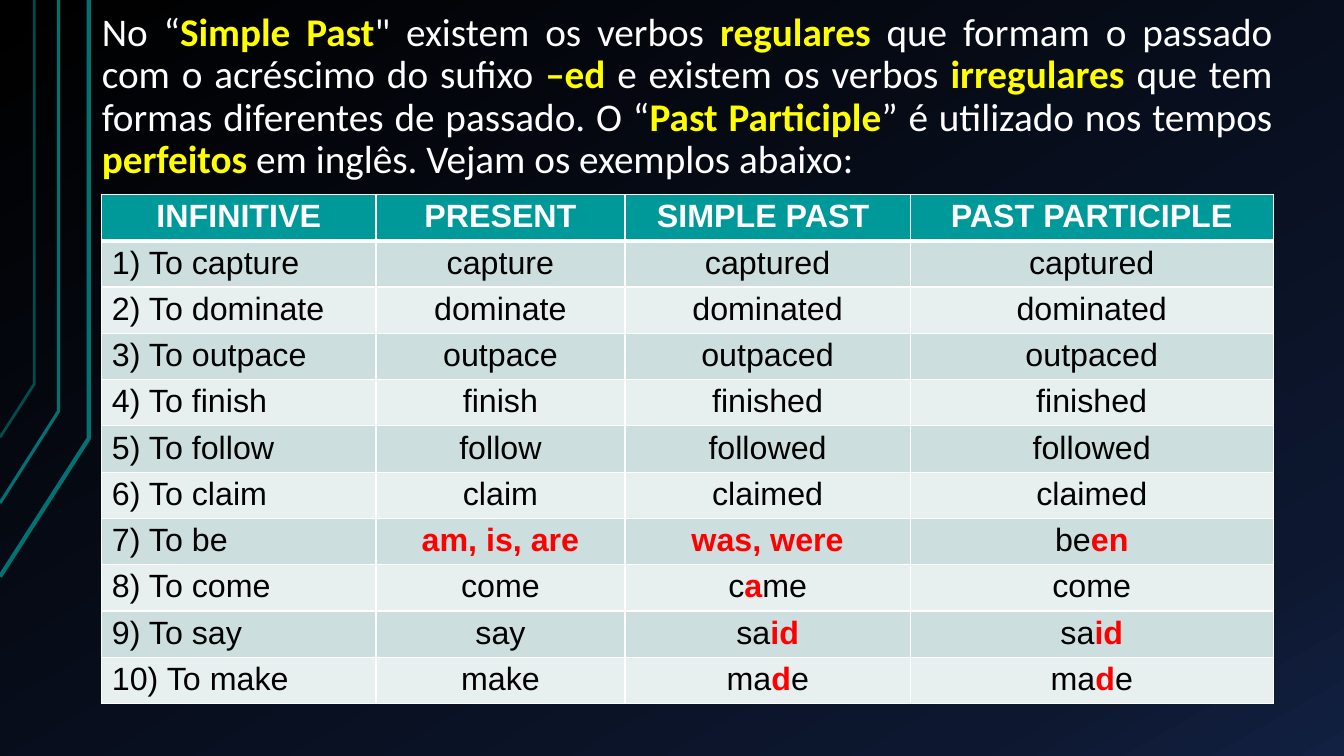
from copy import deepcopy

from lxml import etree
from pptx import Presentation
from pptx.dml.color import RGBColor
from pptx.enum.text import MSO_ANCHOR, PP_ALIGN
from pptx.oxml.ns import qn
from pptx.util import Emu, Inches, Pt

MIDDLE = MSO_ANCHOR.MIDDLE
LEFT, CENTER, JUSTIFY = PP_ALIGN.LEFT, PP_ALIGN.CENTER, PP_ALIGN.JUSTIFY

WHITE = RGBColor(0xFF, 0xFF, 0xFF)
BLACK = RGBColor(0x00, 0x00, 0x00)
YELLOW = RGBColor(0xFF, 0xFF, 0x00)
RED = RGBColor(0xFF, 0x00, 0x00)
HEADER_TEAL = RGBColor(0x00, 0x99, 0x99)
BANDS = (RGBColor(0xCC, 0xDE, 0xDE), RGBColor(0xE7, 0xEF, 0xEF))
LINE_TEAL = RGBColor(0x00, 0x72, 0x72)
DARK_TEAL = RGBColor(0x00, 0x4C, 0x4C)
GRADIENT = ((0, BLACK), (0.85, RGBColor(0x0D, 0x17, 0x2F)), (1, RGBColor(0x12, 0x20, 0x41)))

SLIDE_WIDTH, SLIDE_HEIGHT = 13.33, 7.5
TABLE_LEFT, TABLE_TOP, TABLE_HEIGHT = 1.01, 1.93, 5.05
COLUMN_WIDTHS = (2.72, 2.47, 2.83, 3.6)

# x of the upright part, y of the bend, y at the left edge, colour, width
CIRCUIT_LINES = (
    (0.88, 4.35, 5.72, LINE_TEAL, 3),
    (0.58, 4.08, 4.99, LINE_TEAL, 2.25),
    (0.34, 3.81, 4.34, DARK_TEAL, 2),
)

# Text between asterisks is emphasised.
INTRO = (
    "No “*Simple Past*\" existem os verbos *regulares *que formam o passado com o "
    "acréscimo do sufixo *–ed *e existem os verbos* irregulares *que tem formas "
    "diferentes de passado. O “*Past Participle*” é utilizado nos tempos *perfeitos* "
    "em inglês. Vejam os exemplos abaixo:"
)
HEADERS = ("INFINITIVE", "PRESENT", "SIMPLE PAST ", "PAST PARTICIPLE")
VERBS = (
    ("capture", "capture", "captured", "captured"),
    ("dominate", "dominate", "dominated", "dominated"),
    ("outpace", "outpace", "outpaced", "outpaced"),
    ("finish", "finish", "finished", "finished"),
    ("follow", "follow", "followed", "followed"),
    ("claim", "claim", "claimed", "claimed"),
    ("be", "*am, is, are*", "*was, were*", "be*en*"),
    ("come", "come", "c*a*me", "come"),
    ("say", "say", "sa*id*", "sa*id*"),
    ("make", "make", "ma*d*e", "ma*d*e"),
)


def paint_background(page):
    fill = page.background.fill
    fill.gradient()
    fill.gradient_angle = 300
    first_stop = page.element.find(".//" + qn("a:gs"))
    first_stop.addnext(deepcopy(first_stop))
    for stop, (position, color) in zip(fill.gradient_stops, GRADIENT):
        stop.position = position
        stop.color.rgb = color


def add_circuit_line(page, x, bend_y, edge_y, color, width):
    upright = Inches(x)
    builder = page.shapes.build_freeform(0, Inches(edge_y))
    builder.add_line_segments([(upright, Inches(bend_y)), (upright, 0)], close=False)
    shape = builder.convert_to_shape()
    shape.shadow.inherit = False
    shape.fill.background()
    shape.line.color.rgb = color
    shape.line.width = Pt(width)


def write_marked(para, text, font, size, color, accent, align, bold=False):
    """Write text, giving parts between asterisks the accent colour in bold."""
    para.alignment = align
    para.font.name = font
    para.font.size = Pt(size)
    for index, part in enumerate(text.split("*")):
        if part:
            marked = index % 2 == 1
            span = para.add_run()
            span.text = part
            span.font.name = font
            span.font.size = Pt(size)
            span.font.bold = bold or marked
            span.font.color.rgb = accent if marked else color


def write_intro(page):
    box = page.placeholders[1]
    box.left, box.top = Inches(0.88), Emu(0)
    box.width, box.height = Inches(11.87), Inches(TABLE_TOP)
    frame = box.text_frame
    frame.word_wrap = True
    frame.vertical_anchor = MIDDLE
    frame.margin_left = frame.margin_right = Inches(0.13)
    frame.margin_top = frame.margin_bottom = Inches(0.07)
    para = frame.paragraphs[0]
    para.line_spacing = 0.9
    para.space_before = Pt(16)
    write_marked(para, INTRO, "Calibri", 28, WHITE, YELLOW, JUSTIFY)


def add_borders(cell, top, bottom):
    properties = cell._tc.get_or_add_tcPr()
    for side, width in (("L", 1), ("R", 1), ("T", top), ("B", bottom)):
        line = etree.SubElement(properties, qn("a:ln" + side), w=str(Pt(width)))
        fill = etree.SubElement(line, qn("a:solidFill"))
        etree.SubElement(fill, qn("a:srgbClr"), val=str(WHITE))


def add_verb_table(page):
    rows = [HEADERS] + [
        (f"{number}) To {verb}", *forms)
        for number, (verb, *forms) in enumerate(VERBS, start=1)
    ]
    frame = page.shapes.add_table(
        len(rows), len(HEADERS), Inches(TABLE_LEFT), Inches(TABLE_TOP),
        Inches(sum(COLUMN_WIDTHS)), Inches(TABLE_HEIGHT),
    )
    table = frame.table
    for column, width in zip(table.columns, COLUMN_WIDTHS):
        column.width = Inches(width)
    for row_index, texts in enumerate(rows):
        header = row_index == 0
        for column_index, text in enumerate(texts):
            cell = table.cell(row_index, column_index)
            cell.margin_top = cell.margin_bottom = Inches(0.04)
            add_borders(cell, 3 if row_index == 1 else 1, 3 if header else 1)
            cell.fill.solid()
            cell.fill.fore_color.rgb = HEADER_TEAL if header else BANDS[(row_index - 1) % 2]
            align = CENTER if header or column_index else LEFT
            write_marked(cell.text_frame.paragraphs[0], text, "Arial", 23,
                         WHITE if header else BLACK, RED, align, bold=header)


def main():
    deck = Presentation()
    deck.slide_width, deck.slide_height = Inches(SLIDE_WIDTH), Inches(SLIDE_HEIGHT)
    page = deck.slides.add_slide(deck.slide_layouts.get_by_name("Section Header"))
    title = page.shapes.title.element
    title.getparent().remove(title)
    paint_background(page)
    for line in CIRCUIT_LINES:
        add_circuit_line(page, *line)
    write_intro(page)
    add_verb_table(page)
    deck.save("out.pptx")


if __name__ == "__main__":
    main()
